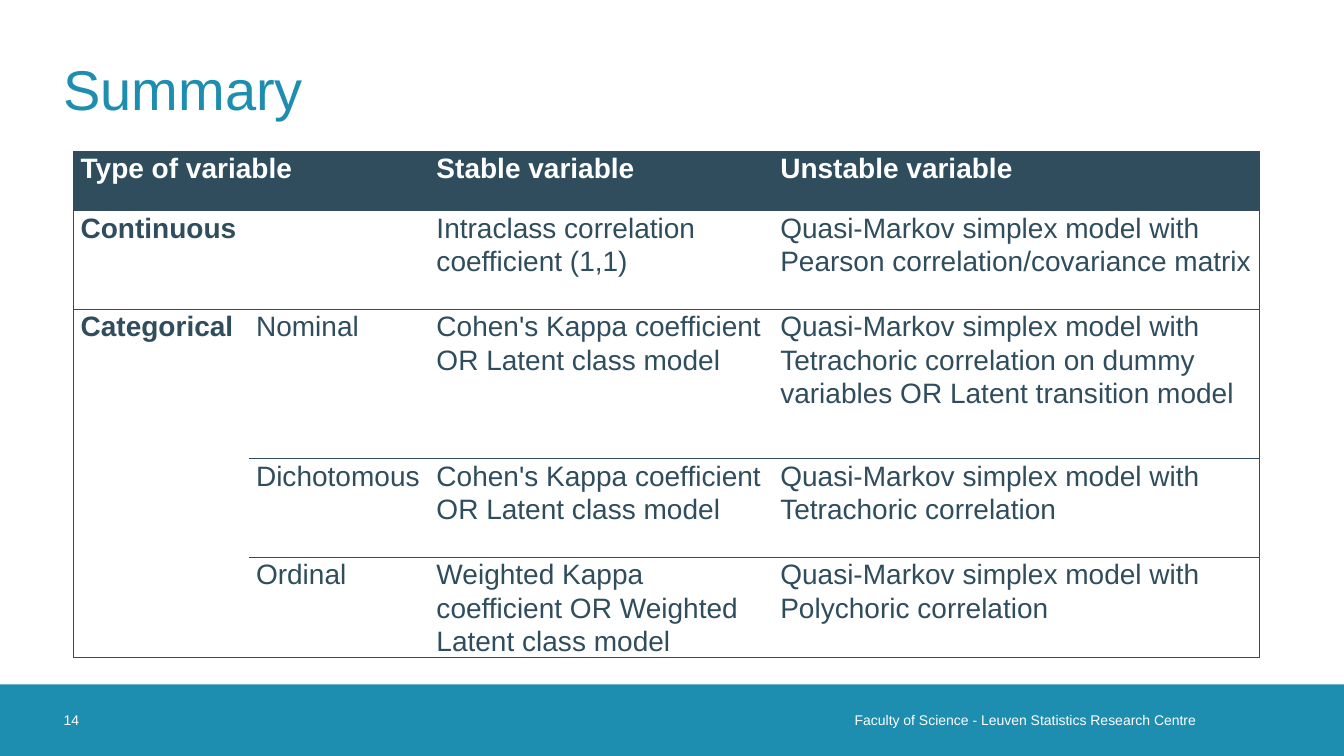
import pptx
import pptx.util
import pptx.dml.color
import pptx.enum.shapes
import pptx.enum.text
import pptx.oxml
import pptx.oxml.ns
from dataclasses import dataclass

Inches = pptx.util.Inches
Pt = pptx.util.Pt
Align = pptx.enum.text.PP_ALIGN
Anchor = pptx.enum.text.MSO_ANCHOR


@dataclass(frozen=True)
class Theme:
    font: str = "Arial"
    teal: str = "1D8DB0"
    navy: str = "2F4D5D"
    white: str = "FFFFFF"
    title: int = 40
    body: int = 20
    small: int = 10
    rule: float = 0.5


THEME = Theme()
COLS = [1.74, 1.79, 3.41, 4.82]
ROWS = [0.59, 0.98, 1.48, 0.98, 0.98]
CELLS = [
    ["Type of variable", "", "Stable variable", "Unstable variable"],
    ["Continuous", "", "Intraclass correlation coefficient (1,1)",
     "Quasi-Markov simplex model with Pearson correlation/covariance matrix"],
    ["Categorical", "Nominal", "Cohen's Kappa coefficient OR Latent class model",
     "Quasi-Markov simplex model with Tetrachoric correlation on dummy "
     "variables OR Latent transition model"],
    ["", "Dichotomous", "Cohen's Kappa coefficient OR Latent class model",
     "Quasi-Markov simplex model with Tetrachoric correlation"],
    ["", "Ordinal", "Weighted Kappa coefficient OR Weighted Latent class model",
     "Quasi-Markov simplex model with Polychoric correlation"],
]


def rgb(code):
    return pptx.dml.color.RGBColor.from_string(code)


def paint(fill, color):
    fill.solid()
    fill.fore_color.rgb = rgb(color)


def write(par, text, size, color, bold=False, align=Align.LEFT):
    par.alignment = align
    run = par.add_run()
    run.text = text
    run.font.name = THEME.font
    run.font.size = Pt(size)
    run.font.bold = bold
    run.font.color.rgb = rgb(color)


def frame(shape, right=0):
    box = shape.text_frame
    box.word_wrap = True
    box.auto_size = pptx.enum.text.MSO_AUTO_SIZE.NONE
    box.vertical_anchor = Anchor.MIDDLE
    box.margin_left = box.margin_top = box.margin_bottom = 0
    box.margin_right = Inches(right)
    return box.paragraphs[0]


def add_title(slide, text):
    title = slide.shapes.title
    title.left, title.top = Inches(0.63), Inches(0.24)
    title.width, title.height = Inches(12.07), Inches(1.26)
    write(frame(title), text, THEME.title, THEME.teal)


def add_band(slide):
    band = slide.shapes.add_shape(
        pptx.enum.shapes.MSO_SHAPE.RECTANGLE,
        0, Inches(6.79), Inches(13.33), Inches(0.71))
    band.shadow.inherit = False
    paint(band.fill, THEME.teal)
    band.line.fill.background()


def add_note(slide, text, left, width, right=0, align=Align.LEFT):
    box = slide.shapes.add_textbox(
        Inches(left), Inches(6.79), Inches(width), Inches(0.71))
    write(frame(box, right), text, THEME.small, THEME.white, align=align)


def set_rules(cell, row, col):
    last = len(ROWS) - 1
    shown = {
        "lnL": col == 0,
        "lnR": col == len(COLS) - 1,
        "lnT": row <= 2 or col > 0,
        "lnB": row <= 1 or row == last or col > 0,
    }
    props = cell._tc.get_or_add_tcPr()
    for spot, (tag, on) in enumerate(shown.items()):
        ink = (f'<a:solidFill><a:srgbClr val="{THEME.navy}"/></a:solidFill>'
               if on else "<a:noFill/>")
        props.insert(spot, pptx.oxml.parse_xml(
            f'<a:{tag} {pptx.oxml.ns.nsdecls("a")} w="{Pt(THEME.rule)}">'
            f'{ink}</a:{tag}>'))


def fill_cell(cell, row, col):
    head = row == 0
    cell.margin_left = cell.margin_right = Inches(0.07)
    cell.margin_top = cell.margin_bottom = 0
    cell.vertical_anchor = Anchor.TOP
    paint(cell.fill, THEME.navy if head else THEME.white)
    set_rules(cell, row, col)
    if CELLS[row][col]:
        par = cell.text_frame.paragraphs[0]
        par.line_spacing = 1.07
        write(par, CELLS[row][col], THEME.body,
              THEME.white if head else THEME.navy, bold=head or col == 0,
              align=Align.JUSTIFY if head else Align.LEFT)


def add_grid(slide):
    grid = slide.shapes.add_table(
        len(ROWS), len(COLS), Inches(0.73), Inches(1.5),
        Inches(sum(COLS)), Inches(sum(ROWS))).table
    grid.first_row = grid.horz_banding = False
    for col, width in enumerate(COLS):
        grid.columns[col].width = Inches(width)
    for row, height in enumerate(ROWS):
        grid.rows[row].height = Inches(height)
        for col in range(len(COLS)):
            fill_cell(grid.cell(row, col), row, col)
    grid.cell(0, 0).merge(grid.cell(0, 1))
    grid.cell(2, 0).merge(grid.cell(3, 0))


def main():
    deck = pptx.Presentation()
    deck.slide_width, deck.slide_height = Inches(13.33), Inches(7.5)
    slide = deck.slides.add_slide(deck.slide_layouts.get_by_name("Title Only"))

    # Footer
    add_band(slide)
    add_note(slide, "Faculty of Science - Leuven Statistics Research Centre",
             6.6, 5.46, right=0.2, align=Align.RIGHT)
    add_note(slide, "14", 0.63, 0.71)

    # Title and summary table
    add_title(slide, "Summary")
    add_grid(slide)
    deck.save("out.pptx")


if __name__ == "__main__":
    main()
